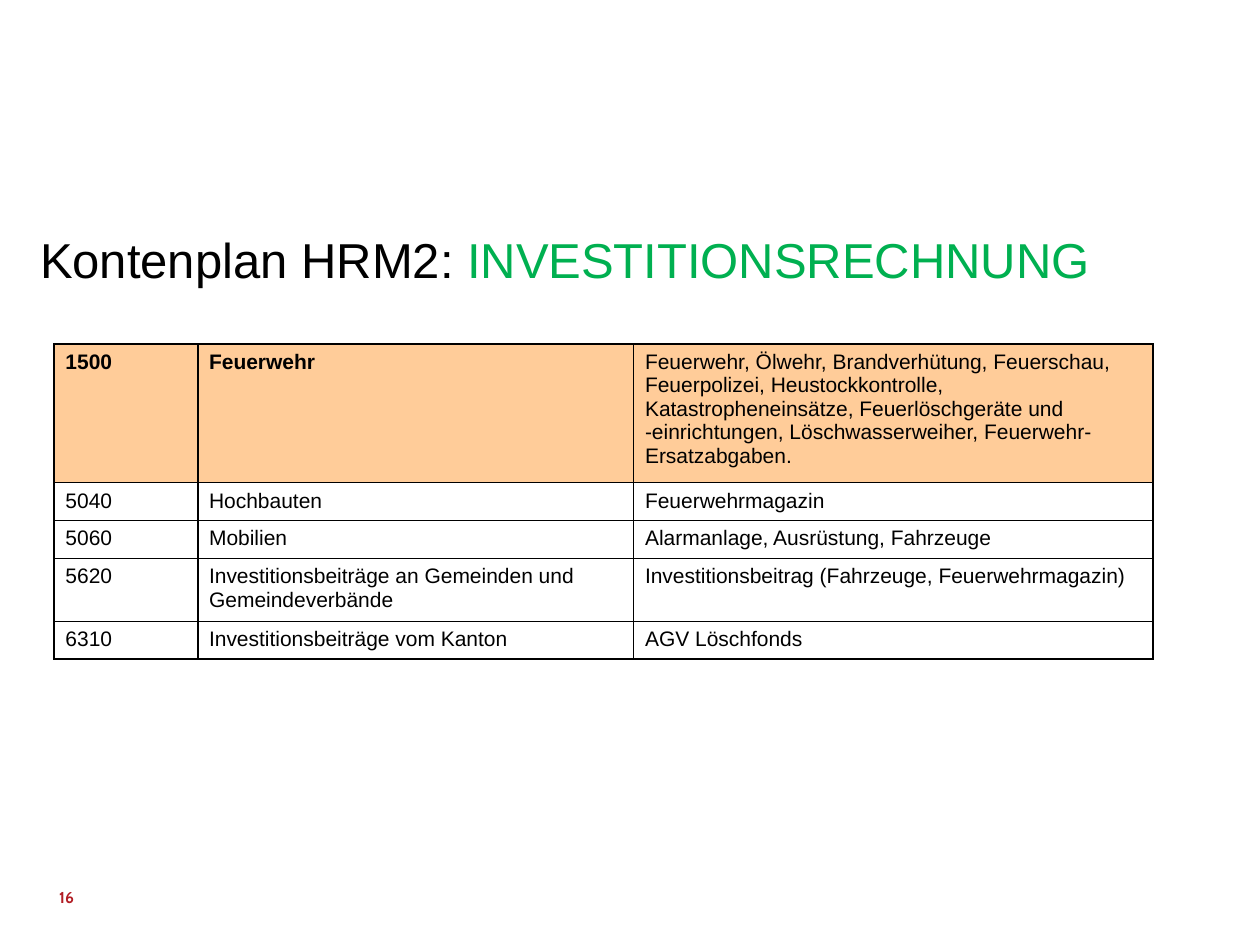
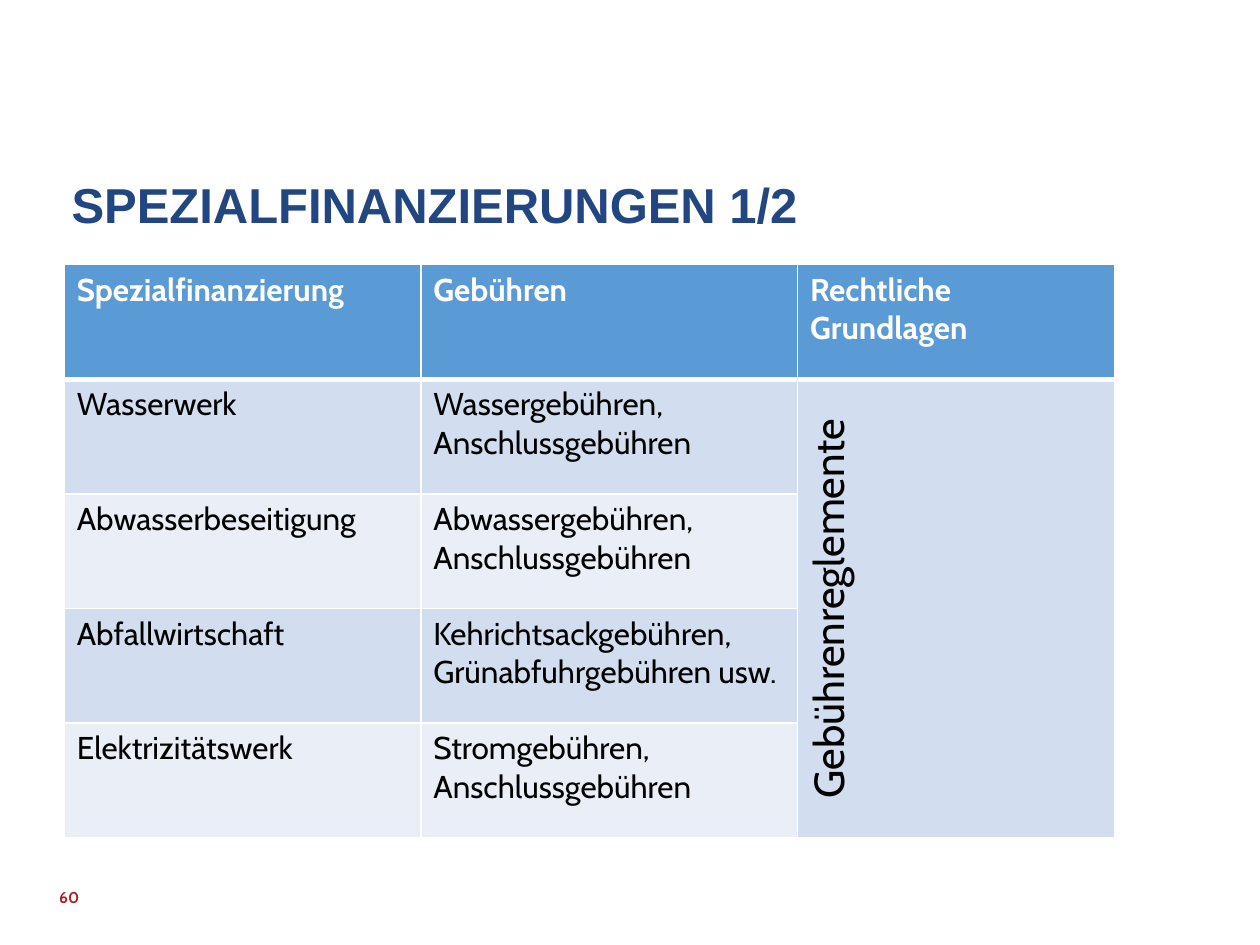
from dataclasses import dataclass

from lxml.etree import SubElement
from pptx import Presentation
from pptx.dml.color import RGBColor as Color
from pptx.enum.text import MSO_ANCHOR as Anchor, PP_ALIGN as Align
from pptx.oxml.ns import qn
from pptx.util import Inches, Pt


@dataclass(frozen=True)
class Theme:
    """Hold the colours, fonts and type sizes of the deck."""
    heading_font: str = "Arial"
    body_font: str = "Cabin"
    black: str = "000000"
    white: str = "FFFFFF"
    green: str = "00B050"
    navy: str = "224681"
    red: str = "B21D24"
    orange: str = "FFCC99"
    header_blue: str = "5B9BD5"
    bands: tuple = ("D2DEEF", "EAEFF7")
    title_size: int = 28
    vertical_size: int = 24
    funding_size: int = 18
    account_size: int = 12
    number_size: int = 9


THEME = Theme()

ACCOUNTS = [
    ("1500", "Feuerwehr",
     "Feuerwehr, Ölwehr, Brandverhütung, Feuerschau, Feuerpolizei, "
     "Heustockkontrolle, Katastropheneinsätze, Feuerlöschgeräte und "
     "-einrichtungen, Löschwasserweiher, Feuerwehr-Ersatzabgaben."),
    ("5040", "Hochbauten", "Feuerwehrmagazin"),
    ("5060", "Mobilien", "Alarmanlage, Ausrüstung, Fahrzeuge"),
    ("5620", "Investitionsbeiträge an Gemeinden und Gemeindeverbände",
     "Investitionsbeitrag (Fahrzeuge, Feuerwehrmagazin)"),
    ("6310", "Investitionsbeiträge vom Kanton", "AGV Löschfonds"),
]

FUNDINGS = [
    ("Spezialfinanzierung", "Gebühren", "Rechtliche Grundlagen"),
    ("Wasserwerk", "Wassergebühren, Anschlussgebühren", "Gebührenreglemente"),
    ("Abwasserbeseitigung", "Abwassergebühren, Anschlussgebühren", ""),
    ("Abfallwirtschaft", "Kehrichtsackgebühren, Grünabfuhrgebühren usw.", ""),
    ("Elektrizitätswerk", "Stromgebühren, Anschlussgebühren", ""),
]


def style_font(font, name, size, color, bold=False):
    """Set the face, size, colour and weight of a font."""
    font.name, font.size, font.bold = name, Pt(size), bold
    font.color.rgb = Color.from_string(color)


def add_text(page, area, spans, name, size, bold=False, anchor=Anchor.MIDDLE):
    """Add a one-paragraph box of (text, colour) spans and return its frame."""
    frame = page.shapes.add_textbox(*map(Inches, area)).text_frame
    frame.word_wrap = True
    frame.vertical_anchor = anchor
    para = frame.paragraphs[0]
    style_font(para.font, name, size, spans[0][1], bold)
    for text, color in spans:
        span = para.add_run()
        span.text = text
        span.font.color.rgb = Color.from_string(color)
    return frame


def add_title(page, area, spans, **options):
    """Add a slide title and return its paragraph."""
    frame = add_text(page, area, spans, THEME.heading_font, THEME.title_size, **options)
    return frame.paragraphs[0]


def add_page_number(page, number):
    """Add the page number at the lower left."""
    frame = add_text(page, (0.47, 6.92, 2.25, 0.4), [(number, THEME.red)],
                     THEME.body_font, THEME.number_size, bold=True)
    frame.margin_left = frame.margin_top = frame.margin_right = frame.margin_bottom = 0


def add_borders(cell, color, top=1, bottom=1):
    """Draw the four cell edges, with widths in points."""
    properties = cell._tc.get_or_add_tcPr()
    for edge, width in (("L", 1), ("R", 1), ("T", top), ("B", bottom)):
        line = SubElement(properties, qn(f"a:ln{edge}"), w=str(Pt(width)))
        SubElement(SubElement(line, qn("a:solidFill")), qn("a:srgbClr"), val=color)


def style_cell(cell, fill, name, size, color, bold=False):
    """Set the fill and the font of a cell."""
    if fill:
        cell.fill.solid()
        cell.fill.fore_color.rgb = Color.from_string(fill)
    else:
        cell.fill.background()
    style_font(cell.text_frame.paragraphs[0].font, name, size, color, bold)


def add_grid(page, left, top, widths, heights, rows):
    """Add a table holding the given rows of text."""
    table = page.shapes.add_table(
        len(rows), len(widths), Inches(left), Inches(top),
        Inches(sum(widths)), Inches(sum(heights))).table
    for column, width in zip(table.columns, widths):
        column.width = Inches(width)
    for row, height, texts in zip(table.rows, heights, rows):
        row.height = Inches(height)
        for cell, text in zip(row.cells, texts):
            cell.text = text
    return table


def add_account_table(page):
    """Add the ruled table of investment accounts."""
    table = add_grid(page, 0.43, 2.73, (1.14, 3.46, 4.12),
                     (0.9, 0.3, 0.3, 0.5, 0.3), ACCOUNTS)
    for index, row in enumerate(table.rows):
        for column, cell in enumerate(row.cells):
            cell.margin_left = cell.margin_right = Inches(0.09)
            add_borders(cell, THEME.black)
            style_cell(cell, THEME.orange if index == 0 else None,
                       THEME.heading_font, THEME.account_size, THEME.black,
                       bold=index == 0 and column < 2)


def add_funding_table(page):
    """Add the banded table of fundings with its merged vertical cell."""
    table = add_grid(page, 0.51, 2.1, (2.83, 2.99, 2.52),
                     [0.91] * len(FUNDINGS), FUNDINGS)
    for index, row in enumerate(table.rows):
        header = index == 0
        fill = THEME.header_blue if header else THEME.bands[(index - 1) % 2]
        for cell in row.cells:
            add_borders(cell, THEME.white, top=3 if index == 1 else 1,
                        bottom=3 if header else 1)
            style_cell(cell, fill, THEME.body_font, THEME.funding_size,
                       THEME.white if header else THEME.black, bold=header)
    rules = table.cell(1, 2)
    rules.merge(table.cell(len(FUNDINGS) - 1, 2))
    rules.vertical_anchor = Anchor.MIDDLE
    rules._tc.get_or_add_tcPr().set("vert", "vert270")
    para = rules.text_frame.paragraphs[0]
    para.alignment = Align.CENTER
    para.font.size = Pt(THEME.vertical_size)


def build_account_page(page):
    """Build the page on the investment account plan."""
    add_title(page, (0.22, 1.7, 8.87, 0.71),
              [("Kontenplan HRM2: ", THEME.black),
               ("INVESTITIONSRECHNUNG", THEME.green)])
    add_account_table(page)
    add_page_number(page, "16")


def build_funding_page(page):
    """Build the page on special fundings."""
    title = add_title(page, (0.47, 1.39, 7.64, 0.94),
                      [("SPEZIALFINANZIERUNGEN 1/2", THEME.navy)],
                      bold=True, anchor=Anchor.TOP)
    title.line_spacing = 0.9
    add_funding_table(page)
    add_page_number(page, "60")


def main():
    """Build and save the deck."""
    deck = Presentation()
    deck.slide_width, deck.slide_height = Inches(10), Inches(7.5)
    for build in (build_account_page, build_funding_page):
        build(deck.slides.add_slide(deck.slide_layouts[6]))
    deck.save("out.pptx")


if __name__ == "__main__":
    main()
